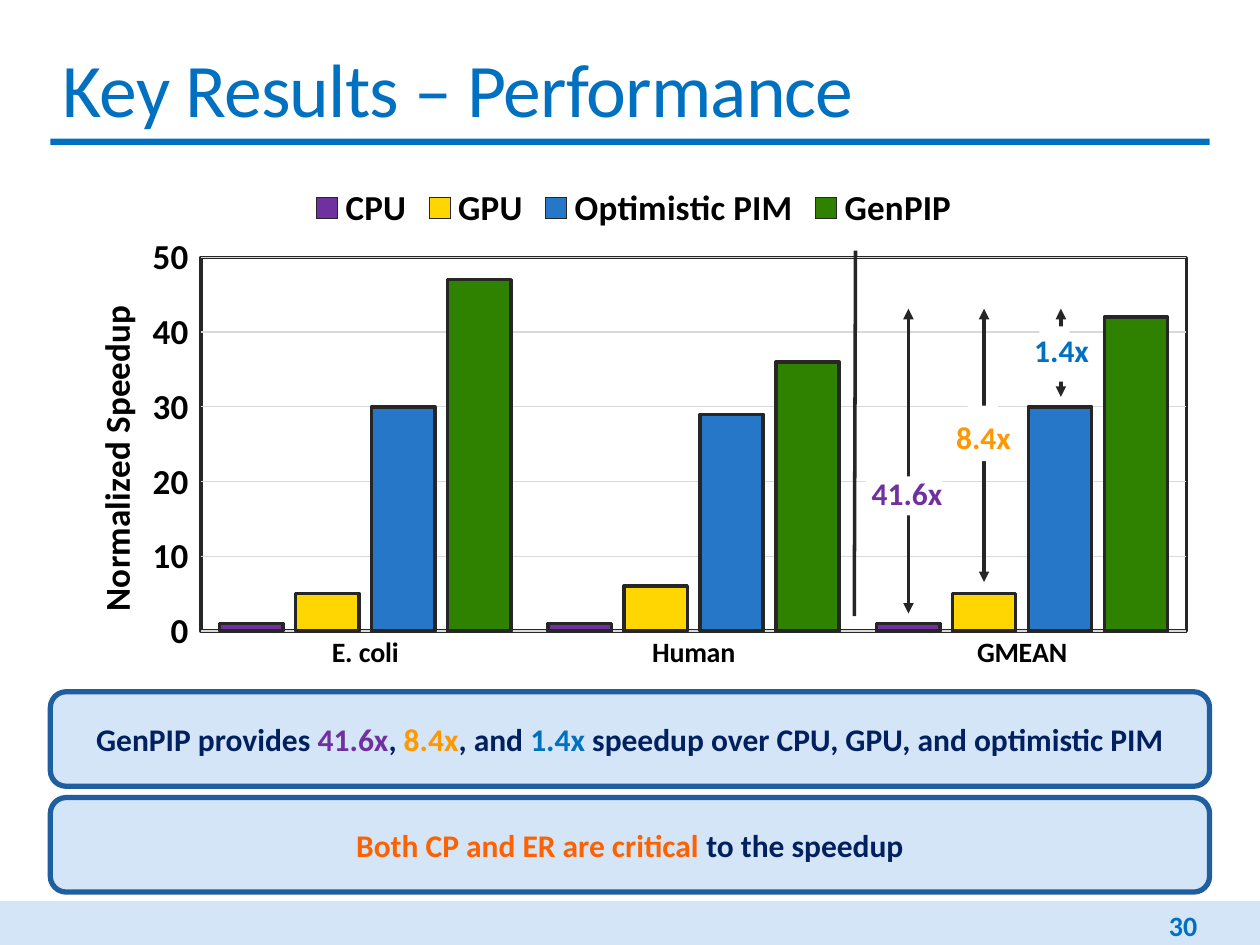
from lxml.etree import SubElement
from pptx import Presentation
from pptx.chart.data import CategoryChartData
from pptx.dml.color import RGBColor
from pptx.enum.chart import XL_CHART_TYPE, XL_LEGEND_POSITION, XL_TICK_MARK
from pptx.enum.shapes import MSO_CONNECTOR, MSO_SHAPE
from pptx.enum.text import MSO_ANCHOR, PP_ALIGN
from pptx.oxml import parse_xml
from pptx.oxml.ns import nsdecls, qn
from pptx.util import Inches, Pt

THEME = {
    "font": "Calibri", "blue": "0070C0", "pale": "D4E5F7", "frame": "1F5FA0",
    "navy": "002060", "purple": "7030A0", "amber": "FF9800", "orange": "FE6200",
    "ink": "262626", "grid": "D9D9D9", "black": "000000", "white": "FFFFFF",
    "title": 43.2, "axis": 20, "category": 16, "body": 18, "number": 16,
}
MARGIN, CONTENT_WIDTH = 0.4, 9.2
TITLE, PAGE = "Key Results – Performance", "30"
CHART_BOX = (MARGIN, 1.26, CONTENT_WIDTH, 4.12)
VALUE_TITLE = "Normalized Speedup"
DATASETS = ["E. coli", "Human", "GMEAN"]
SPEEDUPS = [
    ("CPU", [1, 1, 1], "7030A0"),
    ("GPU", [5, 6, 5], "FFD602"),
    ("Optimistic PIM", [30, 29, 30], "2677C7"),
    ("GenPIP", [47, 36, 42], "2F8100"),
]
GAIN_TOP = 2.45
GAINS = [
    ("41.6x", "purple", 7.21, 4.87, (6.87, 3.78, 0.61, 0.31), (6.82, 3.71, 0.9, 0.4)),
    ("8.4x", "amber", 7.81, 4.62, (7.68, 3.22, 0.24, 0.44), (7.49, 3.27, 0.76, 0.4)),
    ("1.4x", "blue", 8.42, 3.15, (8.25, 2.59, 0.24, 0.44), (8.11, 2.58, 0.74, 0.4)),
]
TAKEAWAY_TOP, TAKEAWAY_STEP, TAKEAWAY_HEIGHT = 5.49, 0.84, 0.75
TAKEAWAYS = [
    [("GenPIP provides ", "navy"), ("41.6x", "purple"), (", ", "navy"), ("8.4x", "amber"),
     (", and ", "navy"), ("1.4x ", "blue"),
     ("speedup over CPU, GPU, and optimistic PIM", "navy")],
    [("Both CP and ER are critical ", "orange"), ("to the speedup", "navy")],
]


def rgb(name):
    return RGBColor.from_string(THEME.get(name, name))


def style_font(font, size, color="black", bold=True):
    font.name, font.size, font.bold = THEME["font"], Pt(size), bold
    font.color.rgb = rgb(color)


def style_line(line, color, width):
    line.color.rgb, line.width = rgb(color), Pt(width)


def write(shape, runs, *, size=THEME["body"], bold=True, align=PP_ALIGN.LEFT,
          anchor=MSO_ANCHOR.TOP, spacing=None):
    frame = shape.text_frame
    frame.word_wrap, frame.vertical_anchor = True, anchor
    paragraph = frame.paragraphs[0]
    paragraph.alignment = align
    for text, color in runs:
        run = paragraph.add_run()
        run.text = text
        style_font(run.font, size, color, bold)
        if spacing is not None:
            run.font._element.set("spc", str(round(spacing * 100)))


def add_text(shapes, box, runs, **text_format):
    write(shapes.add_textbox(*map(Inches, box)), runs, **text_format)


def add_box(shapes, box, fill, outline=None, kind=MSO_SHAPE.RECTANGLE):
    panel = shapes.add_shape(kind, *map(Inches, box))
    panel.shadow.inherit = False
    panel.fill.solid()
    panel.fill.fore_color.rgb = rgb(fill)
    if outline:
        style_line(panel.line, outline, 3)
    else:
        panel.line.fill.background()
    return panel


def add_line(shapes, start, end, arrows=False):
    rule = shapes.add_connector(MSO_CONNECTOR.STRAIGHT, *map(Inches, (*start, *end)))
    style_line(rule.line, "ink", 2)
    properties = rule._element.spPr
    if arrows:
        for tip in ("a:headEnd", "a:tailEnd"):
            SubElement(properties.find(qn("a:ln")), qn(tip), type="triangle")
    SubElement(properties, qn("a:effectLst"))


def place(element, before, inner=False, **fractions):
    for old in element.findall(qn("c:layout")):
        element.remove(old)
    target = '<c:layoutTarget val="inner"/>' if inner else ""
    modes = "".join(f'<c:{side}Mode val="edge"/>' for side in "xy")
    values = "".join(f'<c:{key} val="{value}"/>' for key, value in fractions.items())
    layout = parse_xml(f'<c:layout {nsdecls("c")}><c:manualLayout>{target}{modes}{values}'
                       '</c:manualLayout></c:layout>')
    if before is None:
        element.insert(0, layout)
    else:
        element.find(qn(before)).addnext(layout)


def add_speedup_chart(shapes):
    data = CategoryChartData()
    data.categories = DATASETS
    for name, values, _ in SPEEDUPS:
        data.add_series(name, values)
    chart = shapes.add_chart(XL_CHART_TYPE.COLUMN_CLUSTERED,
                             *map(Inches, CHART_BOX), data).chart
    style_font(chart.font, THEME["axis"])
    chart.has_title = False
    chart.has_legend = True
    chart.legend.position = XL_LEGEND_POSITION.TOP
    chart.legend.include_in_layout = False
    style_font(chart.legend.font, THEME["axis"])
    place(chart.legend._element, "c:legendPos", x=0.22, y=0.04)

    bars = chart.plots[0]
    bars.gap_width, bars.overlap, bars.vary_by_categories = 59, -20, False
    for series, (_, _, color) in zip(bars.series, SPEEDUPS):
        series.format.fill.solid()
        series.format.fill.fore_color.rgb = rgb(color)
        style_line(series.format.line, "ink", 2)

    datasets = chart.category_axis
    datasets.major_tick_mark = XL_TICK_MARK.NONE
    style_font(datasets.tick_labels.font, THEME["category"])
    style_line(datasets.format.line, "grid", 0.75)

    speedup = chart.value_axis
    speedup.minimum_scale, speedup.maximum_scale, speedup.major_unit = 0, 50, 10
    style_font(speedup.tick_labels.font, THEME["axis"])
    speedup.format.line.fill.background()
    style_line(speedup.major_gridlines.format.line, "grid", 0.75)
    caption = speedup.axis_title.text_frame.paragraphs[0].add_run()
    caption.text = VALUE_TITLE
    style_font(caption.font, THEME["axis"])
    place(speedup.axis_title._element, "c:tx", x=0.03, y=0.27)

    plot_area = chart._chartSpace.chart.plotArea
    place(plot_area, None, inner=True, x=0.13, y=0.19, w=0.85, h=0.72)
    plot_area.append(parse_xml(
        f'<c:spPr {nsdecls("c", "a")}><a:noFill/><a:ln w="{Pt(2)}"><a:solidFill>'
        f'<a:srgbClr val="{THEME["ink"]}"/></a:solidFill></a:ln></c:spPr>'))


def main():
    """Build the performance results slide."""
    deck = Presentation()
    deck.slide_width, deck.slide_height = Inches(10), Inches(7.5)
    shapes = deck.slides.add_slide(deck.slide_layouts[6]).shapes

    add_box(shapes, (0, 7.15, 10, 0.35), "pale")
    add_box(shapes, (MARGIN, 1.1, CONTENT_WIDTH, 0.05), "blue")
    add_text(shapes, (MARGIN, 0.28, CONTENT_WIDTH, 0.82), [(TITLE, "blue")],
             size=THEME["title"], bold=False, anchor=MSO_ANCHOR.MIDDLE, spacing=-0.5)
    add_text(shapes, (8.22, 7.19, 1.38, 0.3), [(PAGE, "blue")], size=THEME["number"],
             align=PP_ALIGN.RIGHT, anchor=MSO_ANCHOR.MIDDLE)

    add_speedup_chart(shapes)
    add_line(shapes, (6.79, 1.99), (6.78, 4.89))
    for gain, color, x, bottom, gap, label in GAINS:
        marker = shapes.add_group_shape().shapes
        add_line(marker, (x, bottom), (x, GAIN_TOP), arrows=True)
        add_box(marker, gap, "white")
        add_text(marker, label, [(gain, color)])

    for row, runs in enumerate(TAKEAWAYS):
        box = (MARGIN, TAKEAWAY_TOP + row * TAKEAWAY_STEP, CONTENT_WIDTH, TAKEAWAY_HEIGHT)
        takeaway = add_box(shapes, box, "pale", "frame", MSO_SHAPE.ROUNDED_RECTANGLE)
        write(takeaway, runs, align=PP_ALIGN.CENTER, anchor=MSO_ANCHOR.MIDDLE)

    deck.save("out.pptx")


if __name__ == "__main__":
    main()
